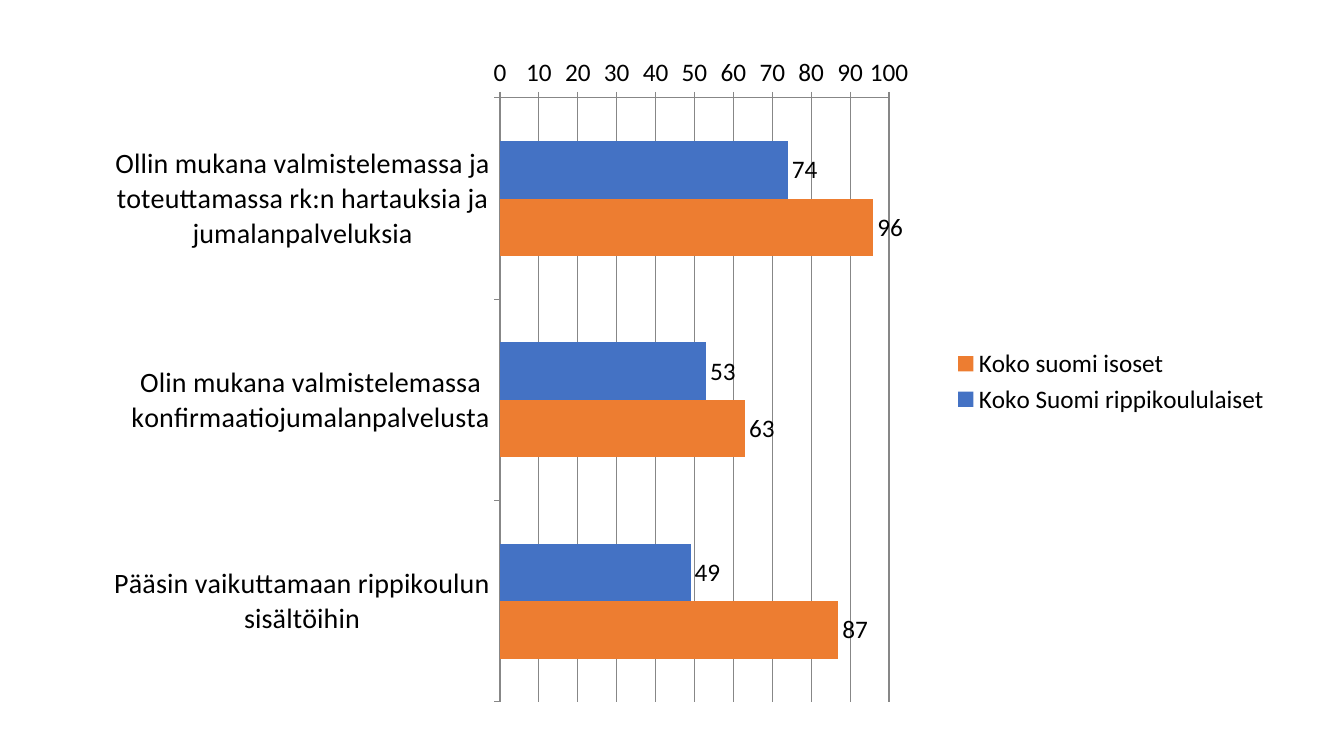
from dataclasses import dataclass

from lxml.etree import SubElement
from pptx import Presentation
from pptx.chart.chart import Chart
from pptx.chart.data import CategoryChartData
from pptx.dml.color import RGBColor
from pptx.enum.chart import (XL_CHART_TYPE, XL_LABEL_POSITION,
                             XL_LEGEND_POSITION, XL_TICK_MARK)
from pptx.oxml.ns import qn
from pptx.util import Inches, Pt

COLORS = {"blue": "4472C4", "orange": "ED7D31", "grid": "878787", "text": "000000"}
FONT = "Calibri"
TOPICS = [
    "Ollin mukana valmistelemassa ja toteuttamassa rk:n hartauksia ja jumalanpalveluksia",
    "Olin mukana valmistelemassa konfirmaatiojumalanpalvelusta",
    "Pääsin vaikuttamaan rippikoulun sisältöihin",
]


@dataclass
class Group:
    name: str
    shares: tuple[int, ...]
    color: str


GROUPS = [
    Group("Koko Suomi rippikoululaiset", (74, 53, 49), "blue"),
    Group("Koko suomi isoset", (96, 63, 87), "orange"),
]


def tint(name: str) -> RGBColor:
    return RGBColor.from_string(COLORS[name])


def set_font(font, size: int) -> None:
    font.name = FONT
    font.size = Pt(size)
    font.color.rgb = tint("text")


def set_line(line) -> None:
    line.color.rgb = tint("grid")
    line.width = Pt(0.75)


def place_plot(chart: Chart, x: float, y: float, w: float, h: float) -> None:
    """Fix the inner plot area as fractions of the chart."""
    area = chart._chartSpace.chart.plotArea
    for old in area.findall(qn("c:layout")):
        area.remove(old)
    layout = SubElement(area, qn("c:layout"))
    area.insert(0, layout)
    manual = SubElement(layout, qn("c:manualLayout"))
    rules = {"layoutTarget": "inner", "xMode": "edge", "yMode": "edge",
             "x": x, "y": y, "w": w, "h": h}
    for tag, value in rules.items():
        SubElement(manual, qn(f"c:{tag}")).set("val", str(value))


def style_axes(chart: Chart) -> None:
    topics, scale = chart.category_axis, chart.value_axis
    for axis, size in ((topics, 20), (scale, 18)):
        axis.major_tick_mark = XL_TICK_MARK.OUTSIDE
        axis.minor_tick_mark = XL_TICK_MARK.NONE
        set_font(axis.tick_labels.font, size)
        set_line(axis.format.line)
    topics.reverse_order = True
    scale.minimum_scale, scale.maximum_scale = 0, 100
    scale.major_unit = 10
    scale.has_major_gridlines = True
    set_line(scale.major_gridlines.format.line)


def style_bars(chart: Chart) -> None:
    plot = chart.plots[0]
    plot.gap_width = 150
    plot.overlap = 0
    plot.vary_by_categories = False
    for group, bars in zip(GROUPS, plot.series):
        bars.format.fill.solid()
        bars.format.fill.fore_color.rgb = tint(group.color)
        bars.invert_if_negative = False
        labels = bars.data_labels
        labels.show_value = True
        labels.position = XL_LABEL_POSITION.OUTSIDE_END
        set_font(labels.font, 18)


def main() -> None:
    deck = Presentation()
    deck.slide_width, deck.slide_height = Inches(13.33), Inches(7.5)
    slide = deck.slides.add_slide(deck.slide_layouts[6])

    data = CategoryChartData()
    data.categories = TOPICS
    for group in GROUPS:
        data.add_series(group.name, group.shares)
    chart = slide.shapes.add_chart(
        XL_CHART_TYPE.BAR_CLUSTERED, Inches(0.9), Inches(0.46),
        Inches(11.8), Inches(6.65), data).chart

    set_font(chart.font, 18)
    chart.has_title = False
    chart.has_legend = True
    chart.legend.position = XL_LEGEND_POSITION.RIGHT
    chart.legend.include_in_layout = False
    set_font(chart.legend.font, 18)
    style_axes(chart)
    style_bars(chart)
    place_plot(chart, 0.344, 0.077, 0.327, 0.901)
    deck.save("out.pptx")


if __name__ == "__main__":
    main()
